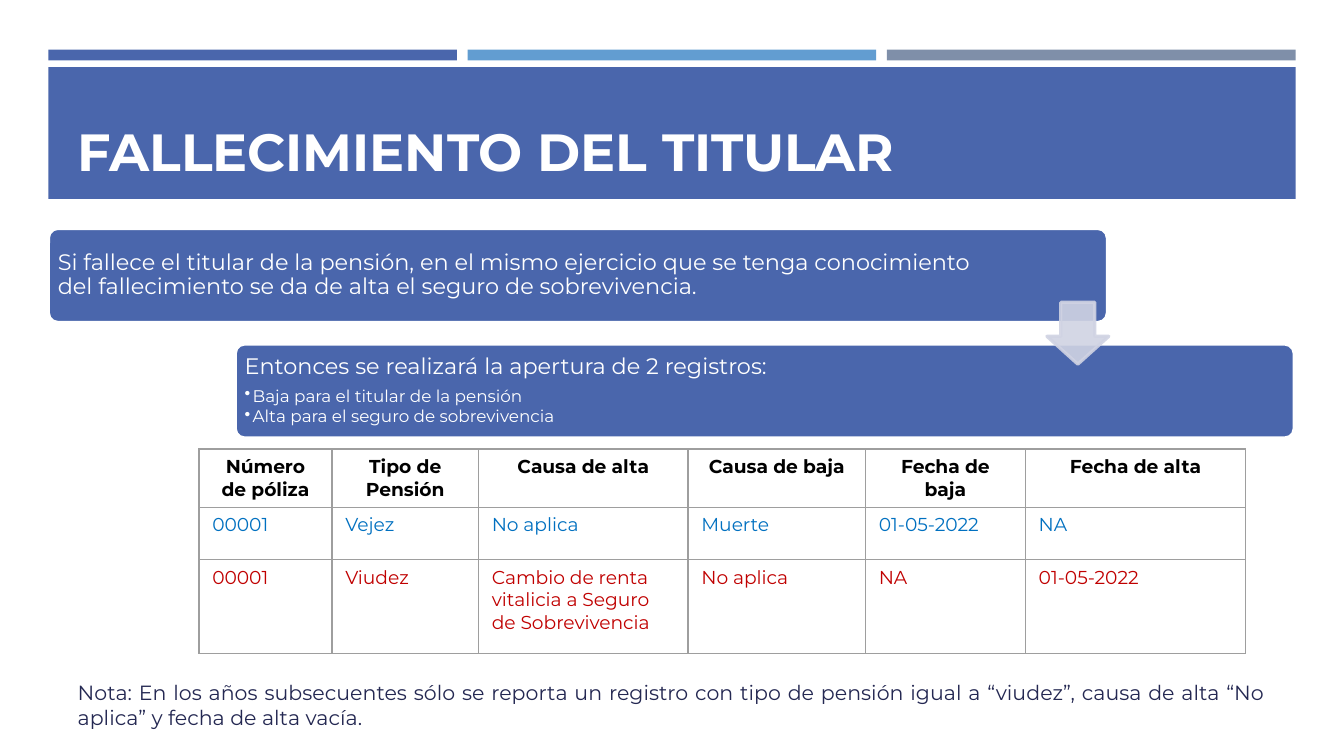
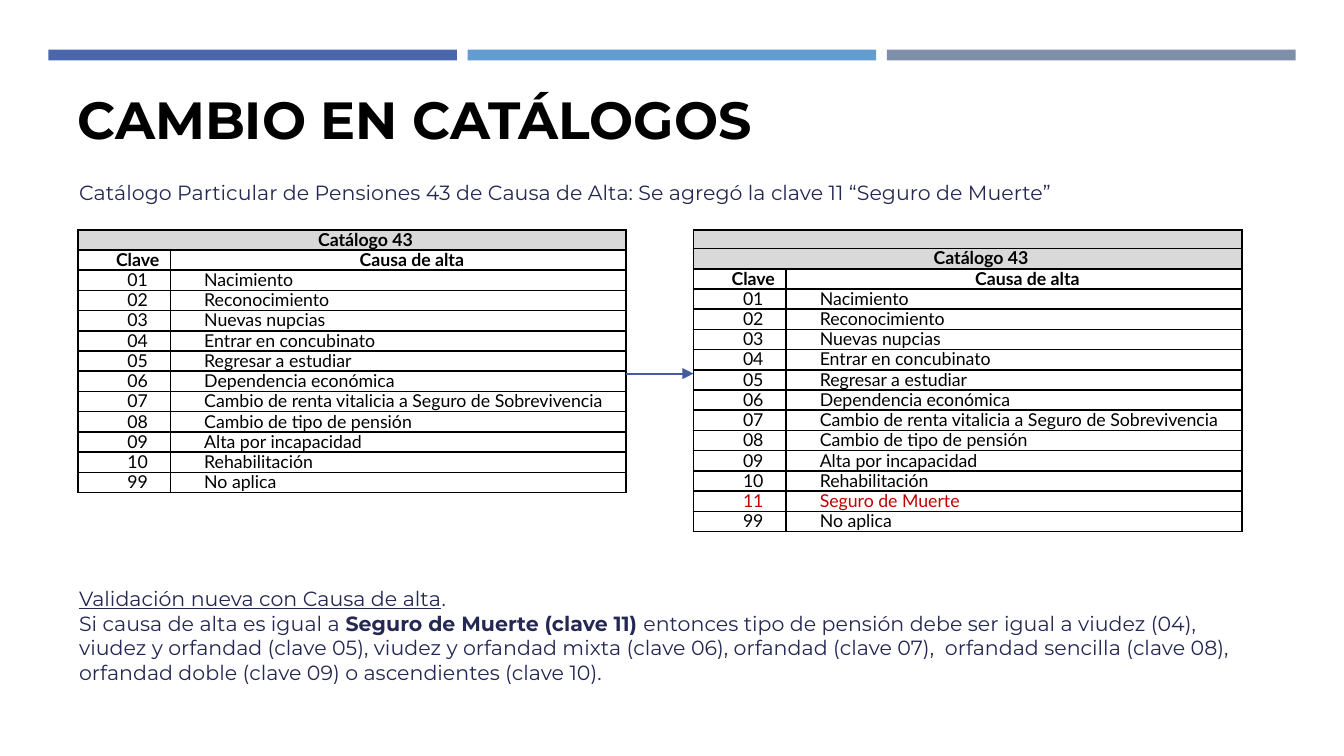
from dataclasses import dataclass, replace
from typing import Optional

import lxml.etree
import pptx
import pptx.dml.color
import pptx.enum.dml
import pptx.enum.shapes
import pptx.enum.text
import pptx.oxml.ns
import pptx.shapes.autoshape
import pptx.slide
import pptx.table
import pptx.text.text
import pptx.util

Inches = pptx.util.Inches
Pt = pptx.util.Pt
RGBColor = pptx.dml.color.RGBColor
Align = pptx.enum.text.PP_ALIGN
Anchor = pptx.enum.text.MSO_ANCHOR
Preset = pptx.enum.shapes.MSO_SHAPE
qn = pptx.oxml.ns.qn

BLUE = RGBColor(0x4A, 0x66, 0xAC)
SKY = RGBColor(0x62, 0x9D, 0xD1)
SLATE = RGBColor(0x7F, 0x8F, 0xA9)
NAVY = RGBColor(0x24, 0x28, 0x52)
ARROW_BLUE = RGBColor(0x43, 0x5C, 0x9B)
PALE = RGBColor(0xD0, 0xD3, 0xE3)
LINK_BLUE = RGBColor(0x00, 0x70, 0xC0)
RED = RGBColor(0xC0, 0x00, 0x00)
GRID_GREY = RGBColor(0x9E, 0x9E, 0x9E)
HEADER_GREY = RGBColor(0xD9, 0xD9, 0xD9)
BLACK = RGBColor(0, 0, 0)
WHITE = RGBColor(0xFF, 0xFF, 0xFF)


@dataclass(frozen=True)
class Area:
    left: float
    top: float
    width: float
    height: float

    def lengths(self) -> list[int]:
        return [Inches(n) for n in (self.left, self.top, self.width, self.height)]


@dataclass(frozen=True)
class TextStyle:
    size: float
    color: RGBColor
    bold: bool = False
    underline: bool = False
    font: str = "Montserrat"
    align: Align = Align.LEFT
    margin: float = 0  # left margin of the paragraph, inches
    indent: float = 0  # first line, inches
    spacing: Optional[float] = None  # a Pt length or a share of the line
    before: float = 0
    after: float = 0


@dataclass(frozen=True)
class GridStyle:
    border: RGBColor
    border_width: float
    side_inset: float
    end_inset: float


TITLE = TextStyle(28, BLACK, bold=True)
BODY = TextStyle(11, NAVY, margin=0.12)
STEP = TextStyle(12, WHITE, spacing=0.9, after=4.2)
STEP_BULLET = TextStyle(9, WHITE, spacing=0.9, after=1.35, margin=0.06, indent=-0.06)
RECORD = TextStyle(10, BLACK)
RECORD_HEADER = replace(RECORD, bold=True, align=Align.CENTER)
CATALOG = TextStyle(9.5, BLACK, font="Lato", align=Align.JUSTIFY, indent=0.2,
                    spacing=Pt(10.8), before=2, after=2)
CATALOG_KEY = replace(CATALOG, align=Align.CENTER)
CATALOG_HEADER = replace(CATALOG_KEY, bold=True)

RECORD_GRID = GridStyle(GRID_GREY, 0.75, 0.1, 0.05)
CATALOG_GRID = GridStyle(BLACK, 1, 0.05, 0)
CATALOG_ROW = 0.15
EMPTY_ROW = 0.14

CAUSES = [
    ("01", "Nacimiento"),
    ("02", "Reconocimiento"),
    ("03", "Nuevas nupcias"),
    ("04", "Entrar en concubinato"),
    ("05", "Regresar a estudiar"),
    ("06", "Dependencia económica"),
    ("07", "Cambio de renta vitalicia a Seguro de Sobrevivencia"),
    ("08", "Cambio de tipo de pensión"),
    ("09", "Alta por incapacidad"),
    ("10", "Rehabilitación"),
    ("99", "No aplica"),
]
NEW_CAUSE = ("11", "Seguro de Muerte")


def format_run(run: pptx.text.text._Run, style: TextStyle) -> None:
    run.font.name = style.font
    run.font.size = Pt(style.size)
    run.font.bold = style.bold
    run.font.underline = style.underline
    run.font.color.rgb = style.color


def format_paragraph(para: pptx.text.text._Paragraph, style: TextStyle) -> None:
    para.alignment = style.align
    para.line_spacing = style.spacing
    para.space_before, para.space_after = Pt(style.before), Pt(style.after)
    properties = para._p.get_or_add_pPr()
    properties.set("marL", str(Inches(style.margin)))
    properties.set("indent", str(Inches(style.indent)))
    for span in para.runs:
        format_run(span, style)


def write(frame: pptx.text.text.TextFrame, text: str, style: TextStyle) -> None:
    frame.text = text
    for para in frame.paragraphs:
        format_paragraph(para, style)


def add_text(slide: pptx.slide.Slide, area: Area, text: str, style: TextStyle,
             insets: tuple[float, float] = (0.1, 0.1),
             anchor: Anchor = Anchor.TOP) -> pptx.text.text.TextFrame:
    """Add a wrapped text box; insets are (sides, top and bottom)."""
    frame = slide.shapes.add_textbox(*area.lengths()).text_frame
    frame.word_wrap = True
    frame.vertical_anchor = anchor
    frame.margin_left = frame.margin_right = Inches(insets[0])
    frame.margin_top = frame.margin_bottom = Inches(insets[1])
    write(frame, text, style)
    return frame


def add_block(slide: pptx.slide.Slide, preset: Preset, area: Area, fill: RGBColor,
              line: Optional[RGBColor] = None,
              adjustments: tuple[float, ...] = ()) -> pptx.shapes.autoshape.Shape:
    shape = slide.shapes.add_shape(preset, *area.lengths())
    shape.shadow.inherit = False
    shape.fill.solid()
    shape.fill.fore_color.rgb = fill
    if line is None:
        shape.line.fill.background()
    else:
        shape.line.color.rgb = line
        shape.line.width = Pt(1.75)
    for index, value in enumerate(adjustments):
        shape.adjustments[index] = value
    return shape


def add_top_bars(slide: pptx.slide.Slide) -> None:
    for index, color in enumerate((BLUE, SKY, SLATE)):
        add_block(slide, Preset.RECTANGLE, Area(0.36 + 3.12 * index, 0.37, 3.04, 0.08), color)


def add_step(slide: pptx.slide.Slide, area: Area, text_width: float,
             text: str) -> pptx.text.text.TextFrame:
    add_block(slide, Preset.ROUNDED_RECTANGLE, area, BLUE, WHITE, (0.1,))
    inner = Area(area.left + 0.02, area.top + 0.02, text_width, area.height - 0.04)
    return add_text(slide, inner, text, STEP, (0.05, 0.05), Anchor.MIDDLE)


def add_bullet(para: pptx.text.text._Paragraph) -> None:
    properties = para._p.get_or_add_pPr()
    lxml.etree.SubElement(properties, qn("a:buChar")).set("char", "•")


def make_translucent(shape: pptx.shapes.autoshape.Shape, percent: int) -> None:
    for color in shape._element.spPr.iter(qn("a:srgbClr")):
        lxml.etree.SubElement(color, qn("a:alpha")).set("val", str(percent * 1000))


def add_grid(slide: pptx.slide.Slide, left: float, top: float, columns: list[float],
             rows: list[float], grid: GridStyle) -> pptx.table.Table:
    """Add a table of white cells ruled on every side."""
    area = Area(left, top, sum(columns), sum(rows))
    table = slide.shapes.add_table(len(rows), len(columns), *area.lengths()).table
    table.first_row = table.horz_banding = False
    for column, width in zip(table.columns, columns):
        column.width = Inches(width)
    for row, height in zip(table.rows, rows):
        row.height = Inches(height)
    for cell in table.iter_cells():
        cell.margin_left = cell.margin_right = Inches(grid.side_inset)
        cell.margin_top = cell.margin_bottom = Inches(grid.end_inset)
        for side in ("a:lnL", "a:lnR", "a:lnT", "a:lnB"):
            edge = lxml.etree.SubElement(cell._tc.get_or_add_tcPr(), qn(side))
            edge.set("w", str(Pt(grid.border_width)))
            fill = lxml.etree.SubElement(edge, qn("a:solidFill"))
            lxml.etree.SubElement(fill, qn("a:srgbClr")).set("val", str(grid.border))
        fill_cell(cell, WHITE)
    return table


def fill_cell(cell: pptx.table._Cell, color: RGBColor) -> None:
    cell.fill.solid()
    cell.fill.fore_color.rgb = color


def add_catalog(slide: pptx.slide.Slide, left: float, banners: list[str],
                causes: list[tuple[str, str]]) -> None:
    """Add a catalogue with grey full-width banner rows above its headings."""
    heights = [CATALOG_ROW if banner else EMPTY_ROW for banner in banners]
    heights += [CATALOG_ROW] * (1 + len(causes))
    table = add_grid(slide, left, 1.71, [0.69, 3.39], heights, CATALOG_GRID)
    for row, banner in enumerate(banners):
        cell = table.cell(row, 0)
        cell.merge(table.cell(row, 1))
        fill_cell(cell, HEADER_GREY)
        write(cell.text_frame, banner, CATALOG_HEADER)
        if not banner:
            end = lxml.etree.SubElement(cell.text_frame.paragraphs[0]._p, qn("a:endParaRPr"))
            end.set("sz", "800")
    for row, record in enumerate([("Clave", "Causa de alta"), *causes], len(banners)):
        if row == len(banners):
            styles = (CATALOG_HEADER, CATALOG_HEADER)
        else:
            styles = (CATALOG_KEY, CATALOG)
        color = RED if record == NEW_CAUSE else BLACK
        for column, (text, style) in enumerate(zip(record, styles)):
            write(table.cell(row, column).text_frame, text, replace(style, color=color))


def add_arrow(slide: pptx.slide.Slide, start: float, end: float, height: float) -> None:
    arrow = slide.shapes.add_connector(
        pptx.enum.shapes.MSO_CONNECTOR.STRAIGHT,
        Inches(start), Inches(height), Inches(end), Inches(height))
    arrow.line.color.rgb = ARROW_BLUE
    arrow.line.width = Pt(1)
    lxml.etree.SubElement(arrow.line._get_or_add_ln(), qn("a:tailEnd")).set("type", "triangle")
    lxml.etree.SubElement(arrow._element.spPr, qn("a:effectLst"))


def build_death_slide(slide: pptx.slide.Slide) -> None:
    add_top_bars(slide)
    add_block(slide, Preset.RECTANGLE, Area(0.36, 0.5, 9.28, 0.98), BLUE)
    add_text(slide, Area(0.48, 0.57, 9.05, 0.83), "FALLECIMIENTO DEL TITULAR",
             replace(TITLE, color=WHITE), (0.1, 0.05), Anchor.BOTTOM)

    records = [
        ("Número de póliza", "Tipo de Pensión", "Causa de alta",
         "Causa de baja", "Fecha de baja", "Fecha de alta"),
        ("00001", "Vejez", "No aplica", "Muerte", "01-05-2022", "NA"),
        ("00001", "Viudez", "Cambio de renta vitalicia a Seguro de Sobrevivencia",
         "No aplica", "NA", "01-05-2022"),
    ]
    styles = (RECORD_HEADER, replace(RECORD, color=LINK_BLUE), replace(RECORD, color=RED))
    table = add_grid(slide, 1.48, 3.34, [0.99, 1.09, 1.56, 1.32, 1.19, 1.64],
                     [0.43, 0.39, 0.7], RECORD_GRID)
    for row, (record, style) in enumerate(zip(records, styles)):
        for column, text in enumerate(record):
            write(table.cell(row, column).text_frame, text, style)

    add_step(slide, Area(0.36, 1.7, 7.88, 0.7), 7.15,
             "Si fallece el titular de la pensión, en el mismo ejercicio que se tenga "
             "conocimiento del fallecimiento se da de alta el seguro de sobrevivencia.")
    opening = add_step(slide, Area(1.75, 2.56, 7.88, 0.7), 5.99,
                       "Entonces se realizará la apertura de 2 registros:\n"
                       "Baja para el titular de la pensión\n"
                       "Alta para el seguro de sobrevivencia")
    for para in opening.paragraphs[1:]:
        para.level = 1
        format_paragraph(para, STEP_BULLET)
        add_bullet(para)
    arrow = add_block(slide, Preset.DOWN_ARROW, Area(7.79, 2.25, 0.46, 0.46), PALE, PALE,
                      (0.55, 0.45))
    make_translucent(arrow, 90)

    add_text(slide, Area(0.36, 4.96, 9.16, 0.49),
             "Nota: En los años subsecuentes sólo se reporta un registro con tipo de pensión "
             "igual a “viudez”, causa de alta “No aplica” y fecha de alta vacía.",
             replace(BODY, align=Align.JUSTIFY))


def build_catalog_slide(slide: pptx.slide.Slide) -> None:
    add_top_bars(slide)
    add_text(slide, Area(0.48, 0.55, 9.16, 0.97), "CAMBIO EN CATÁLOGOS", TITLE)
    add_text(slide, Area(0.37, 1.25, 8.98, 0.47),
             "Catálogo Particular de Pensiones 43 de Causa de Alta: "
             "Se agregó la clave 11 “Seguro de Muerte”", BODY)
    add_catalog(slide, 0.58, ["Catálogo 43"], CAUSES)

    frame = add_text(slide, Area(0.37, 4.26, 8.98, 1.23),
                     "Validación nueva con Causa de alta\nSi causa de alta es igual a ", BODY)
    heading, rule = frame.paragraphs
    format_run(heading.runs[0], replace(BODY, underline=True))
    for para, text, style in (
        (heading, ".", BODY),
        (rule, "Seguro de Muerte (clave 11) ", replace(BODY, bold=True)),
        (rule, "entonces tipo de pensión debe ser igual a viudez (04), viudez y orfandad "
               "(clave 05), viudez y orfandad mixta (clave 06), orfandad (clave 07),  orfandad "
               "sencilla (clave 08), orfandad doble (clave 09) o ascendientes (clave 10).", BODY),
    ):
        span = para.add_run()
        span.text = text
        format_run(span, style)

    add_catalog(slide, 5.16, ["", "Catálogo 43"], [*CAUSES[:-1], NEW_CAUSE, CAUSES[-1]])
    add_arrow(slide, 4.66, 5.16, 2.78)


def main() -> None:
    deck = pptx.Presentation()
    deck.slide_width = Inches(10)
    deck.slide_height = deck.slide_width * 9 // 16
    for build in (build_death_slide, build_catalog_slide):
        build(deck.slides.add_slide(deck.slide_layouts[6]))
    deck.save("out.pptx")


if __name__ == "__main__":
    main()
